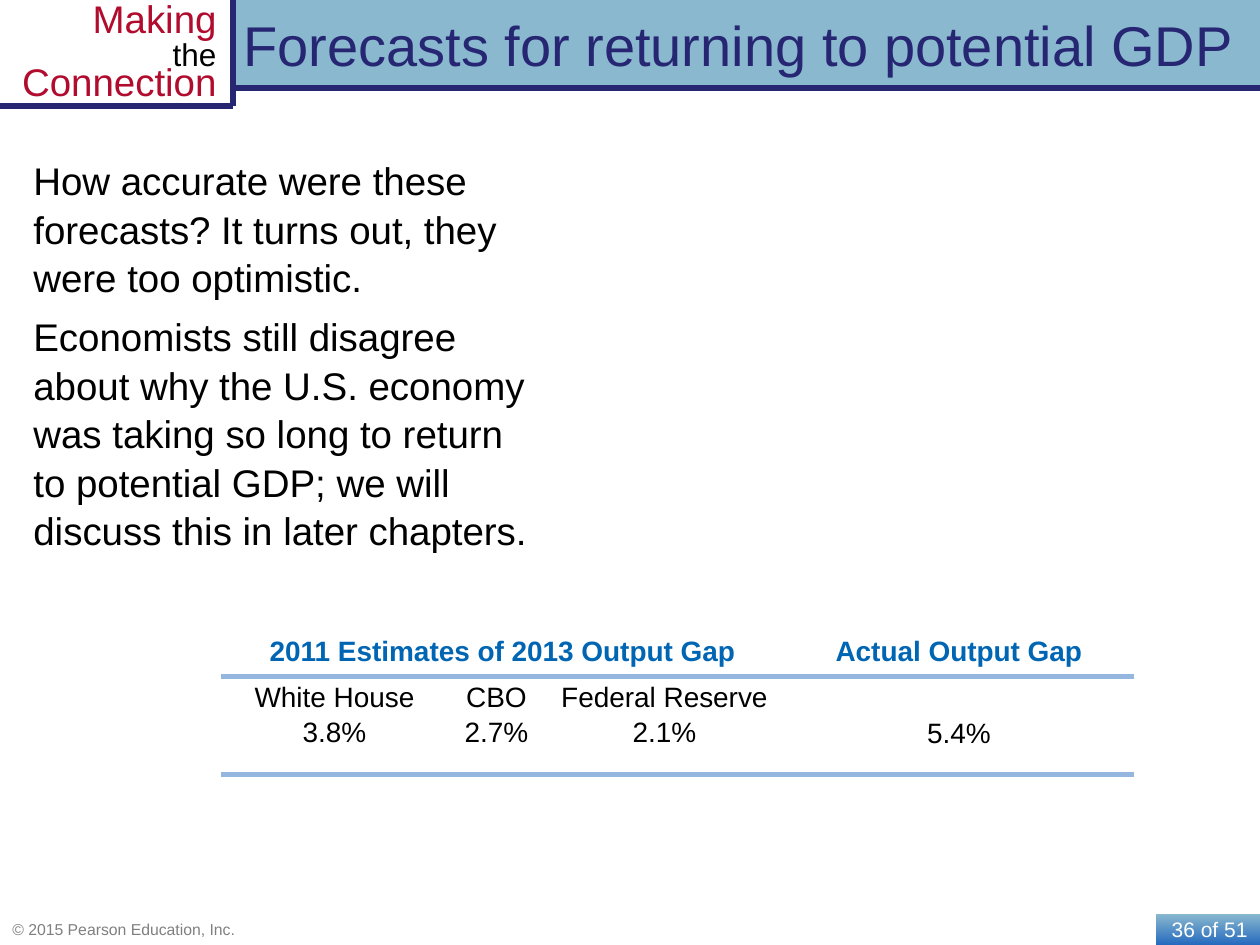
import pptx
import pptx.dml.color
import pptx.enum.shapes
import pptx.enum.text
import pptx.oxml
import pptx.oxml.ns
import pptx.util
import lxml.etree

COLORS = {
    "navy": "262673",
    "sky": "89B8CF",
    "blue": "256ABD",
    "heading": "0066B3",
    "rule": "95B6DF",
    "red": "B10C2D",
    "gray": "808080",
    "black": "000000",
    "white": "FFFFFF",
}
ALIGN = pptx.enum.text.PP_ALIGN
ANCHOR = pptx.enum.text.MSO_ANCHOR


def rgb(name):
    return pptx.dml.color.RGBColor.from_string(COLORS[name])


def px(value):
    return pptx.util.Emu(round(value * 914400 / 126))


class SlideBuilder:
    font_name = "Arial"
    rule_width = 3

    def __init__(self, slide):
        self.slide = slide

    def format_font(self, font, size, color, bold=False):
        font.name = self.font_name
        font.size = pptx.util.Pt(size)
        font.bold = bold
        font.color.rgb = rgb(color)

    def fill_text(self, text_frame, text, size, color, align=ALIGN.LEFT,
                  bold=False, gap=0, spacing=None):
        text_frame.text = text
        text_frame.word_wrap = True
        for index, paragraph in enumerate(text_frame.paragraphs):
            paragraph.alignment = align
            if index:
                paragraph.space_before = pptx.util.Pt(gap)
            if spacing:
                paragraph.line_spacing = spacing
            for run in paragraph.runs:
                self.format_font(run.font, size, color, bold)

    def text(self, left, top, width, height, text, size, color,
             anchor=ANCHOR.MIDDLE, **style):
        box = self.slide.shapes.add_textbox(px(left), px(top), px(width), px(height))
        box.text_frame.vertical_anchor = anchor
        self.fill_text(box.text_frame, text, size, color, **style)

    def rectangle(self, left, top, width, height, *colors):
        shape = self.slide.shapes.add_shape(
            pptx.enum.shapes.MSO_SHAPE.RECTANGLE,
            px(left), px(top), px(width), px(height))
        shape.shadow.inherit = False
        shape.line.fill.background()
        if len(colors) == 1:
            shape.fill.solid()
            shape.fill.fore_color.rgb = rgb(colors[0])
        else:
            shape.fill.gradient()
            shape.fill.gradient_angle = 270
            for stop, color, position in zip(shape.fill.gradient_stops, colors, (0, 1)):
                stop.color.rgb = rgb(color)
                stop.position = position
        return shape

    def line(self, x1, y1, x2, y2, color):
        connector = self.slide.shapes.add_connector(
            pptx.enum.shapes.MSO_CONNECTOR.STRAIGHT, px(x1), px(y1), px(x2), px(y2))
        connector.line.color.rgb = rgb(color)
        connector.line.width = pptx.util.Pt(self.rule_width)
        lxml.etree.SubElement(connector._element.spPr, pptx.oxml.ns.qn("a:effectLst"))

    def style_cell(self, cell, ruled_sides):
        properties = cell._tc.get_or_add_tcPr()
        for side in "LRTB":
            border = lxml.etree.SubElement(properties, pptx.oxml.ns.qn("a:ln" + side))
            if side in ruled_sides:
                border.set("w", str(pptx.util.Pt(self.rule_width)))
                fill = lxml.etree.SubElement(border, pptx.oxml.ns.qn("a:solidFill"))
                color = lxml.etree.SubElement(fill, pptx.oxml.ns.qn("a:srgbClr"))
                color.set("val", COLORS["rule"])
            else:
                lxml.etree.SubElement(border, pptx.oxml.ns.qn("a:noFill"))
        cell.fill.background()

    def table(self, left, top, widths, heights, headings, estimates):
        table = self.slide.shapes.add_table(
            len(heights), len(widths), px(left), px(top),
            px(sum(widths)), px(sum(heights))).table
        table.first_row = table.horz_banding = False
        for column, width in zip(table.columns, widths):
            column.width = px(width)
        for row, height, sides in zip(table.rows, heights, ("B", "TB")):
            row.height = px(height)
            for cell in row.cells:
                self.style_cell(cell, sides)
        for first, last, heading in headings:
            cell = table.cell(0, first)
            if last > first:
                cell.merge(table.cell(0, last))
            self.fill_text(cell.text_frame, heading, 16, "heading", ALIGN.CENTER, True)
        for column, lines in enumerate(estimates):
            cell = table.cell(1, column)
            self.fill_text(cell.text_frame, "\n".join(lines), 16, "black",
                           ALIGN.CENTER, gap=2)
            if len(lines) == 1:
                cell.margin_top = px(42)


def main():
    presentation = pptx.Presentation()
    presentation.slide_width = px(1260)
    presentation.slide_height = px(945)
    slide = presentation.slides.add_slide(presentation.slide_layouts[6])
    builder = SlideBuilder(slide)

    page_number = builder.rectangle(1156, 914, 104, 31, "sky", "blue")
    page_number.text_frame.vertical_anchor = ANCHOR.MIDDLE
    builder.fill_text(page_number.text_frame, "36 of 51", 12, "white", ALIGN.RIGHT)
    builder.text(0, 913, 1160, 32, "© 2015 Pearson Education, Inc.", 9, "gray")

    builder.rectangle(231, 0, 1029, 88, "sky")
    builder.line(233, 88, 1260, 88, "navy")

    label = builder.rectangle(0, 4, 229, 87, "white")
    label.text_frame.vertical_anchor = ANCHOR.TOP
    builder.fill_text(label.text_frame, "Making\vthe\vConnection", 22, "red",
                      ALIGN.RIGHT, spacing=pptx.util.Pt(18))
    builder.format_font(label.text_frame.paragraphs[0].runs[1].font, 18, "black")
    builder.line(233, 0, 233, 106, "navy")
    builder.line(0, 106, 233, 106, "navy")

    builder.text(231, 0, 1029, 88, "Forecasts for returning to potential GDP", 32, "navy")
    builder.text(
        21, 149, 525, 418,
        "How accurate were these forecasts? It turns out, they were too optimistic.\n"
        "Economists still disagree about why the U.S. economy was taking so long "
        "to return to potential GDP; we will discuss this in later chapters.",
        22, "black", anchor=ANCHOR.TOP, gap=6, spacing=1.05)

    builder.table(
        221, 630, (227, 97, 239, 350), (43, 98),
        ((0, 2, "2011 Estimates of 2013 Output Gap"), (3, 3, "Actual Output Gap")),
        (("White House", "3.8%"), ("CBO", "2.7%"), ("Federal Reserve", "2.1%"), ("5.4%",)))

    presentation.save("out.pptx")


if __name__ == "__main__":
    main()
